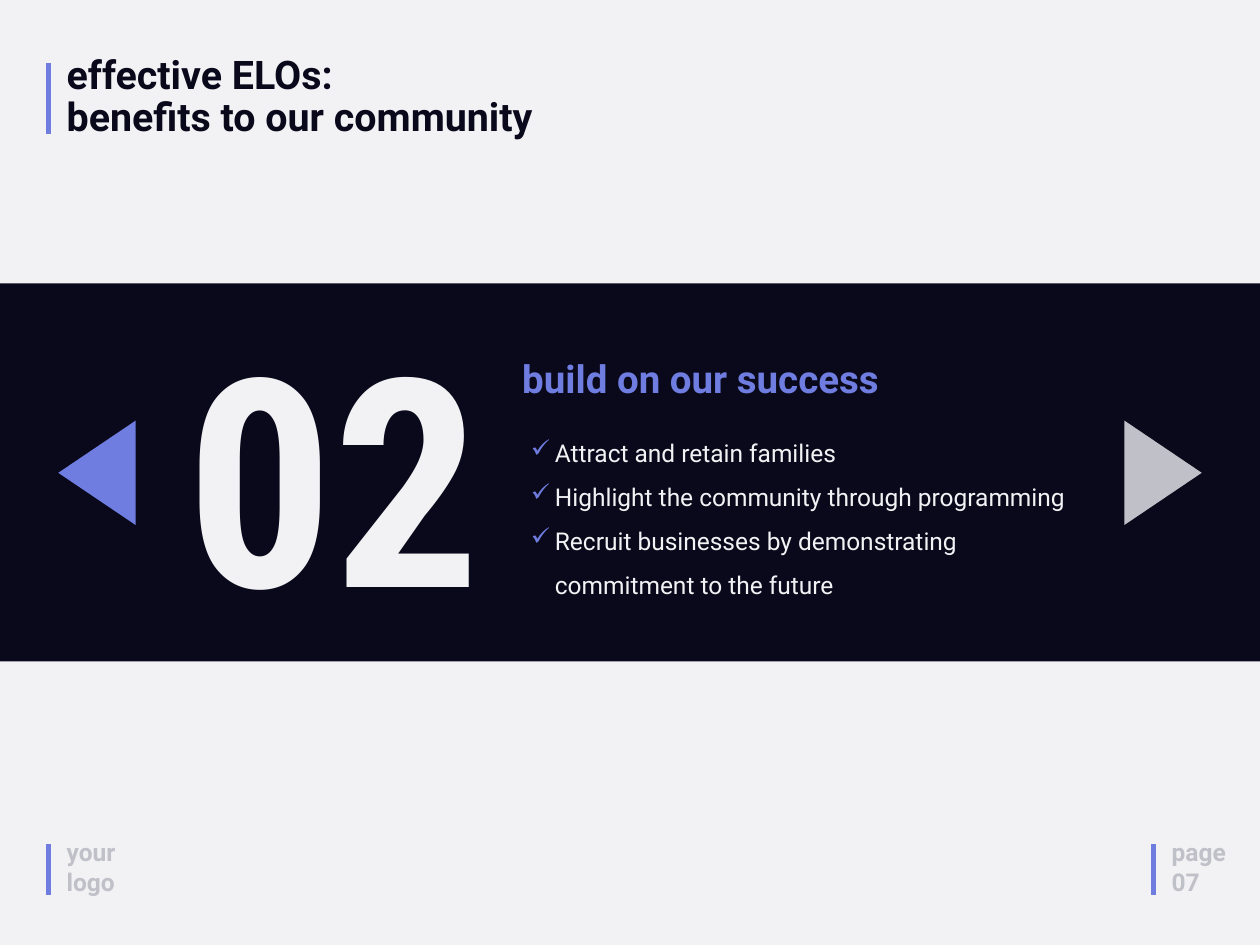
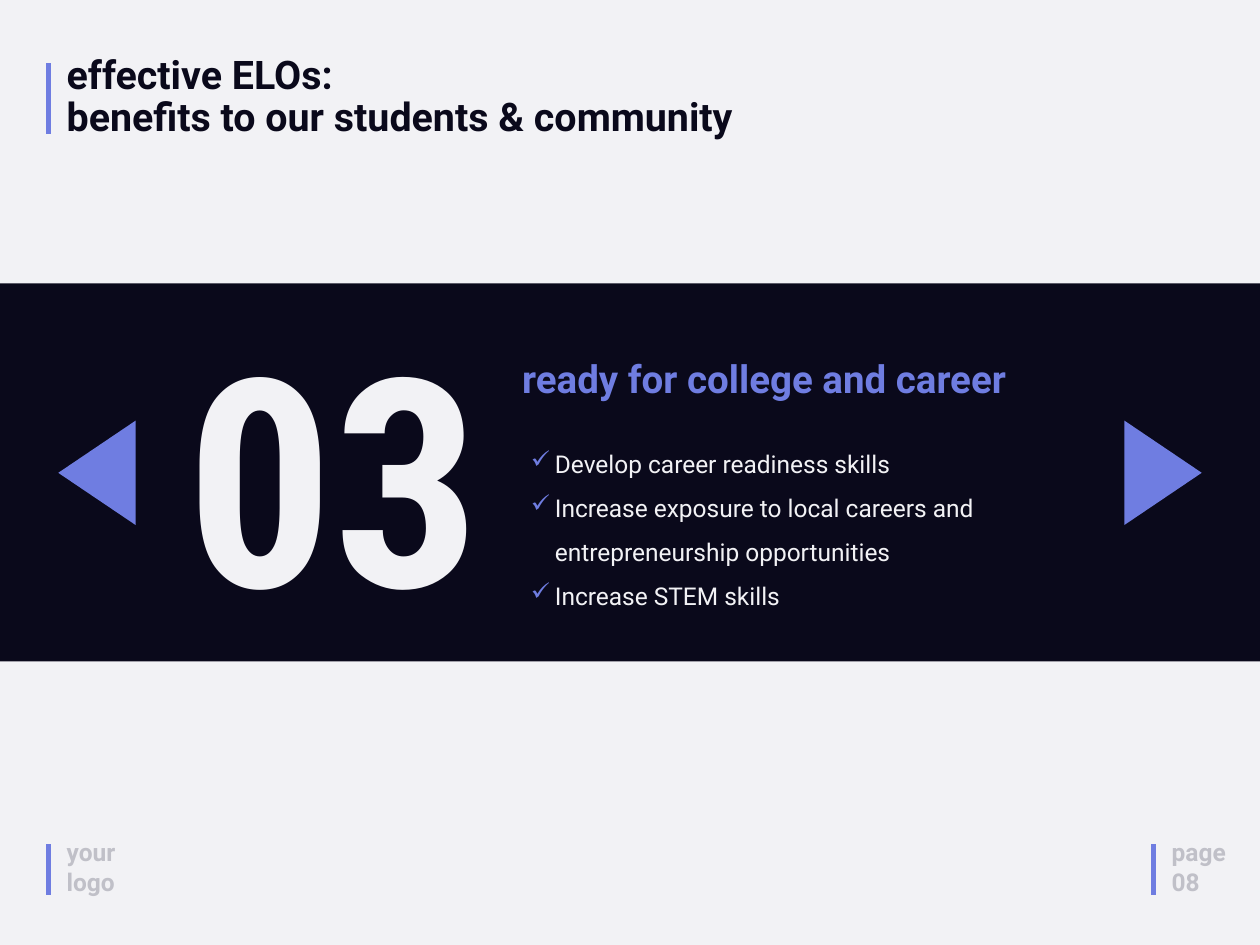
"""Builds two benefit slides with a numbered band on a 20 by 15 grid."""
import dataclasses

import lxml.etree
import pptx
import pptx.dml.color
import pptx.enum.shapes
import pptx.enum.text
import pptx.oxml.ns
import pptx.shapes.autoshape
import pptx.slide
import pptx.text.text
import pptx.util

COLS, ROWS = 20, 15
CELL = pptx.util.Inches(1)
COLORS = {"paper": "F2F2F5", "ink": "0A091B", "accent": "6F7DE1", "muted": "C0C0C8"}
RULE_X, LABEL_X, PAGE_X = 0.77, 0.96, 18.5
FOOTER_Y = 13.24
ARROW_X, ARROW_Y, ARROW_W, ARROW_H = 0.71, 6.89, 1.66, 1.23


@dataclasses.dataclass(frozen=True)
class Box:
    x: float
    y: float
    w: float
    h: float

    def emu(self) -> list[int]:
        return [round(n * CELL) for n in (self.x, self.y, self.w, self.h)]


@dataclasses.dataclass(frozen=True)
class Style:
    size: float
    color: str
    font: str = "Roboto"
    bold: bool = True
    spacing: float = 1.0


@dataclasses.dataclass(frozen=True)
class Rule:
    x: float
    top: float
    bottom: float


@dataclasses.dataclass(frozen=True)
class Benefit:
    title: str
    title_w: float
    page: str
    number: str
    next_color: str
    heading: str
    heading_w: float
    list_y: float
    list_w: float
    points: tuple[str, ...]


TITLE = Style(45, "ink", spacing=0.9)
FOOTER = Style(28, "muted")
NUMBER = Style(333, "paper", font="Roboto Condensed")
HEADING = Style(44, "accent")
POINT = Style(28, "paper", bold=False, spacing=1.5)

RULES = (Rule(RULE_X, 1, 2.13), Rule(RULE_X, 13.4, 14.21), Rule(18.31, 13.4, 14.21))
BENEFITS = (
    Benefit(
        "effective ELOs:\nbenefits to our community", 8.54, "07", "02", "muted",
        "build on our success", 6.81, 6.67, 9.08,
        (
            "Attract and retain families",
            "Highlight the community through programming",
            "Recruit businesses by demonstrating commitment to the future",
        ),
    ),
    Benefit(
        "effective ELOs:\nbenefits to our students & community", 11.46, "08", "03", "accent",
        "ready for college and career", 8.89, 6.84, 8.42,
        (
            "Develop career readiness skills",
            "Increase exposure to local careers and entrepreneurship opportunities",
            "Increase STEM skills",
        ),
    ),
)


def rgb(name: str) -> pptx.dml.color.RGBColor:
    return pptx.dml.color.RGBColor.from_string(COLORS[name])


def add_check(p: pptx.text.text._Paragraph) -> None:
    qn = pptx.oxml.ns.qn
    ppr = p._p.get_or_add_pPr()
    indent = round(0.38 * CELL)
    ppr.set("marL", str(indent))
    ppr.set("indent", str(-indent))
    color = lxml.etree.Element(qn("a:buClr"))
    lxml.etree.SubElement(color, qn("a:srgbClr"), val=COLORS["accent"])
    char = lxml.etree.Element(qn("a:buChar"), char="✓")
    at = ppr.index(ppr.find(qn("a:defRPr")))
    ppr.insert(at, color)
    ppr.insert(at + 1, char)


def add_text(s: pptx.slide.Slide, box: Box, style: Style, *texts: str, checked: bool = False) -> None:
    tf = s.shapes.add_textbox(*box.emu()).text_frame
    tf.word_wrap = True
    tf.auto_size = pptx.enum.text.MSO_AUTO_SIZE.SHAPE_TO_FIT_TEXT
    for i, text in enumerate(texts):
        p = tf.add_paragraph() if i else tf.paragraphs[0]
        p.text = text
        p.line_spacing = style.spacing
        p.font.name = style.font
        p.font.size = pptx.util.Pt(style.size)
        p.font.bold = style.bold
        p.font.color.rgb = rgb(style.color)
        if checked:
            add_check(p)


def add_shape(
    s: pptx.slide.Slide, kind: pptx.enum.shapes.MSO_SHAPE, box: Box, color: str
) -> pptx.shapes.autoshape.Shape:
    sp = s.shapes.add_shape(kind, *box.emu())
    sp.shadow.inherit = False
    sp.fill.solid()
    sp.fill.fore_color.rgb = rgb(color)
    sp.line.fill.background()
    return sp


def add_arrow(s: pptx.slide.Slide, x: float, color: str, rotation: float) -> None:
    box = Box(x, ARROW_Y, ARROW_W, ARROW_H)
    sp = add_shape(s, pptx.enum.shapes.MSO_SHAPE.ISOSCELES_TRIANGLE, box, color)
    sp.rotation = rotation


def add_rule(s: pptx.slide.Slide, rule: Rule) -> None:
    x, top, bottom = (round(n * CELL) for n in (rule.x, rule.top, rule.bottom))
    line = s.shapes.add_connector(pptx.enum.shapes.MSO_CONNECTOR.STRAIGHT, x, top, x, bottom)
    line.line.color.rgb = rgb("accent")
    line.line.width = pptx.util.Pt(5)
    lxml.etree.SubElement(line._element.spPr, pptx.oxml.ns.qn("a:effectLst"))


def add_frame(s: pptx.slide.Slide, title: str, title_w: float, page: str) -> None:
    for rule in RULES:
        add_rule(s, rule)
    add_text(s, Box(LABEL_X, FOOTER_Y, 1.19, 1.04), FOOTER, "your logo")
    add_shape(s, pptx.enum.shapes.MSO_SHAPE.RECTANGLE, Box(0, 4.5, COLS, 6), "ink")
    add_text(s, Box(LABEL_X, 0.83, title_w, 1.46), TITLE, title)
    add_text(s, Box(PAGE_X, FOOTER_Y, COLS - PAGE_X, 1.04), FOOTER, "page", page)


def add_benefit(s: pptx.slide.Slide, b: Benefit) -> None:
    add_frame(s, b.title, b.title_w, b.page)
    add_text(s, Box(2.86, 4.65, 5.96, 5.71), NUMBER, b.number)
    add_arrow(s, COLS - ARROW_X - ARROW_W, b.next_color, 90)
    add_arrow(s, ARROW_X, "accent", 270)
    add_text(s, Box(8.19, 5.59, b.heading_w, 0.84), HEADING, b.heading)
    add_text(s, Box(8.33, b.list_y, b.list_w, 2.93), POINT, *b.points, checked=True)


def main() -> None:
    prs = pptx.Presentation()
    prs.slide_width, prs.slide_height = COLS * CELL, ROWS * CELL
    fill = prs.slide_master.background.fill
    fill.solid()
    fill.fore_color.rgb = rgb("paper")
    for benefit in BENEFITS:
        add_benefit(prs.slides.add_slide(prs.slide_layouts[6]), benefit)
    prs.save("out.pptx")


if __name__ == "__main__":
    main()
